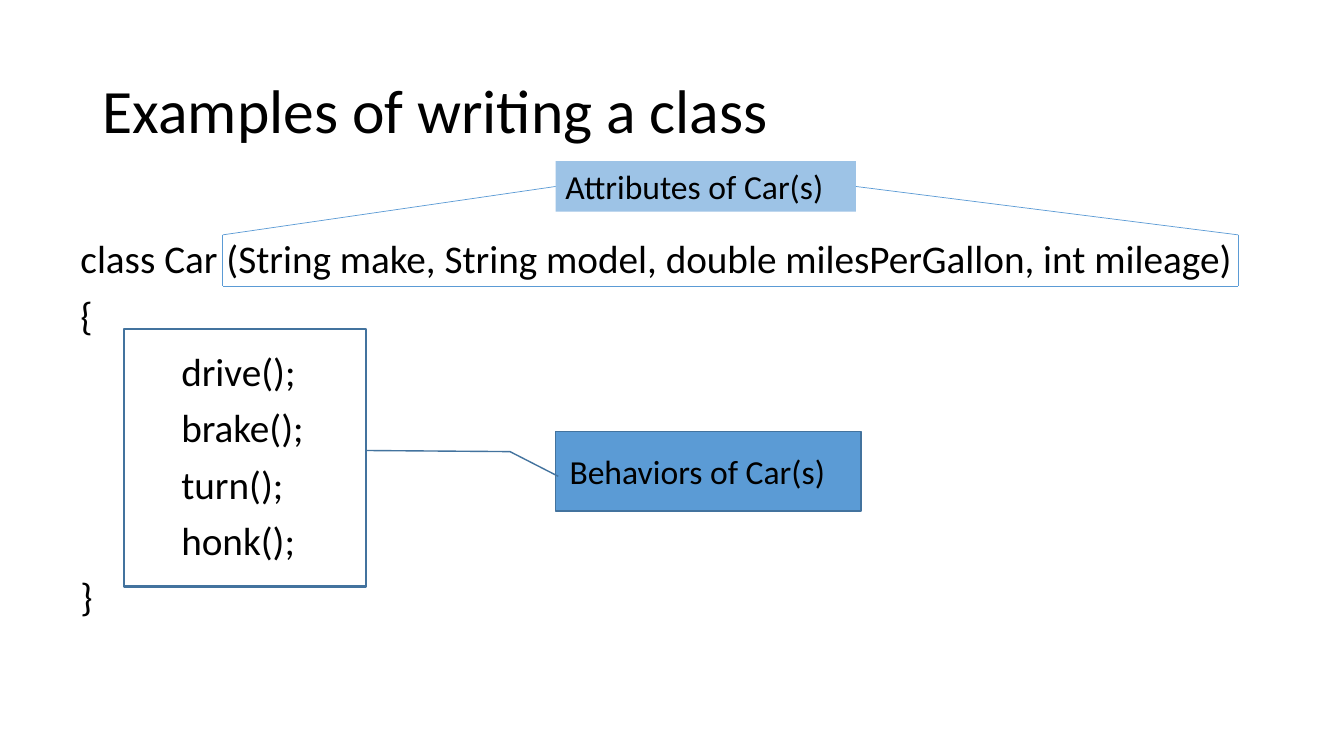
from pptx import Presentation
from pptx.dml.color import RGBColor
from pptx.enum.shapes import MSO_CONNECTOR, MSO_SHAPE
from pptx.enum.text import MSO_ANCHOR, PP_ALIGN
from pptx.oxml.ns import qn
from pptx.util import Inches, Pt
from lxml import etree

# Content
COLORS = {"text": "000000", "blue": "5B9BD5", "pale": "9DC3E6", "edge": "43739E"}
TITLE = "Examples of writing a class"
CODE = [  # (indent level, line)
    (0, "class Car (String make, String model, double milesPerGallon, int mileage)"),
    (0, "{"),
    (1, "drive();"),
    (1, "brake();"),
    (1, "turn();"),
    (1, "honk();"),
    (0, "}"),
]
ATTRIBUTES = "Attributes of Car(s)"
BEHAVIORS = "Behaviors of Car(s)"

# Places: left, top, width, height in inches
TITLE_AT = (0.92, 0.4, 11.5, 1.45)
CODE_AT = (0.7, 2.33, 11.97, 4.69)
ATTRIBUTES_AT = (5.51, 1.6, 2.98, 0.5)
BEHAVIORS_AT = (5.55, 4.42, 2.98, 0.5)
CALLOUT_AT = (5.51, 4.28, 3.03, 0.79)
METHODS_AT = (1.23, 3.26, 2.4, 2.56)
CALLOUT_BENDS = (0.564, 0.009, 0.254, -0.149, 0.24, -0.617)
PARAMETERS = {"left": 2.21, "top": 2.33, "right": 12.28, "bottom": 2.84}

deck = Presentation()
deck.slide_width, deck.slide_height = Inches(13.33), Inches(7.5)
page = deck.slides.add_slide(deck.slide_layouts[6])


def write(shape, lines, size, anchor=MSO_ANCHOR.TOP, spacing=None):
    frame = shape.text_frame
    frame.word_wrap = True
    frame.vertical_anchor = anchor
    for number, (level, line) in enumerate(lines):
        para = frame.paragraphs[0] if number == 0 else frame.add_paragraph()
        for name, value in {"alignment": PP_ALIGN.LEFT, **(spacing or {})}.items():
            setattr(para, name, value)
        if level:
            para._p.get_or_add_pPr().set("marL", str(Inches(level)))
        span = para.add_run()
        span.text = line
        for name, value in {"name": "Calibri", "size": Pt(size)}.items():
            setattr(span.font, name, value)
        span.font.color.rgb = RGBColor.from_string(COLORS["text"])


def add_text(place, *args, **options):
    write(page.shapes.add_textbox(*map(Inches, place)), *args, **options)


def add_box(kind, place, fill=None, edge=None, width=1):
    box = page.shapes.add_shape(kind, *map(Inches, place))
    box.shadow.inherit = False
    if fill:
        box.fill.solid()
        box.fill.fore_color.rgb = RGBColor.from_string(COLORS[fill])
    else:
        box.fill.background()
    if edge:
        box.line.color.rgb = RGBColor.from_string(COLORS[edge])
        box.line.width = Pt(width)
    else:
        box.line.fill.background()
    return box


def add_line(start, end):
    line = page.shapes.add_connector(MSO_CONNECTOR.STRAIGHT, *map(Inches, start + end))
    line.line.color.rgb = RGBColor.from_string(COLORS["blue"])
    line.line.width = Pt(0.5)
    etree.SubElement(line._element.spPr, qn("a:effectLst"))


# Callout pointing at the methods
callout = add_box(MSO_SHAPE.LINE_CALLOUT_2, CALLOUT_AT, "blue", "edge")
for number, bend in enumerate(CALLOUT_BENDS):
    callout.adjustments[number] = bend

# Title and code
add_text(TITLE_AT, [(0, TITLE)], 44, anchor=MSO_ANCHOR.MIDDLE, spacing={"line_spacing": 0.9})
add_text(CODE_AT, CODE, 28, spacing={"line_spacing": 0.9, "space_before": Pt(10)})

# Labels
add_text(BEHAVIORS_AT, [(0, BEHAVIORS)], 24)
write(add_box(MSO_SHAPE.RECTANGLE, ATTRIBUTES_AT, "pale"), [(0, ATTRIBUTES)], 24)

# Open-topped frame around the parameters, joined to the label's sides
label_left, label_top, label_width, label_height = ATTRIBUTES_AT
label_middle = label_top + label_height / 2
for side, label_x in (("left", label_left), ("right", label_left + label_width)):
    corner = (PARAMETERS[side], PARAMETERS["top"])
    add_line((label_x, label_middle), corner)
    add_line(corner, (PARAMETERS[side], PARAMETERS["bottom"]))
add_line((PARAMETERS["left"], PARAMETERS["bottom"]), (PARAMETERS["right"], PARAMETERS["bottom"]))

# Frame around the methods
add_box(MSO_SHAPE.RECTANGLE, METHODS_AT, edge="edge", width=1.5)

deck.save("out.pptx")
